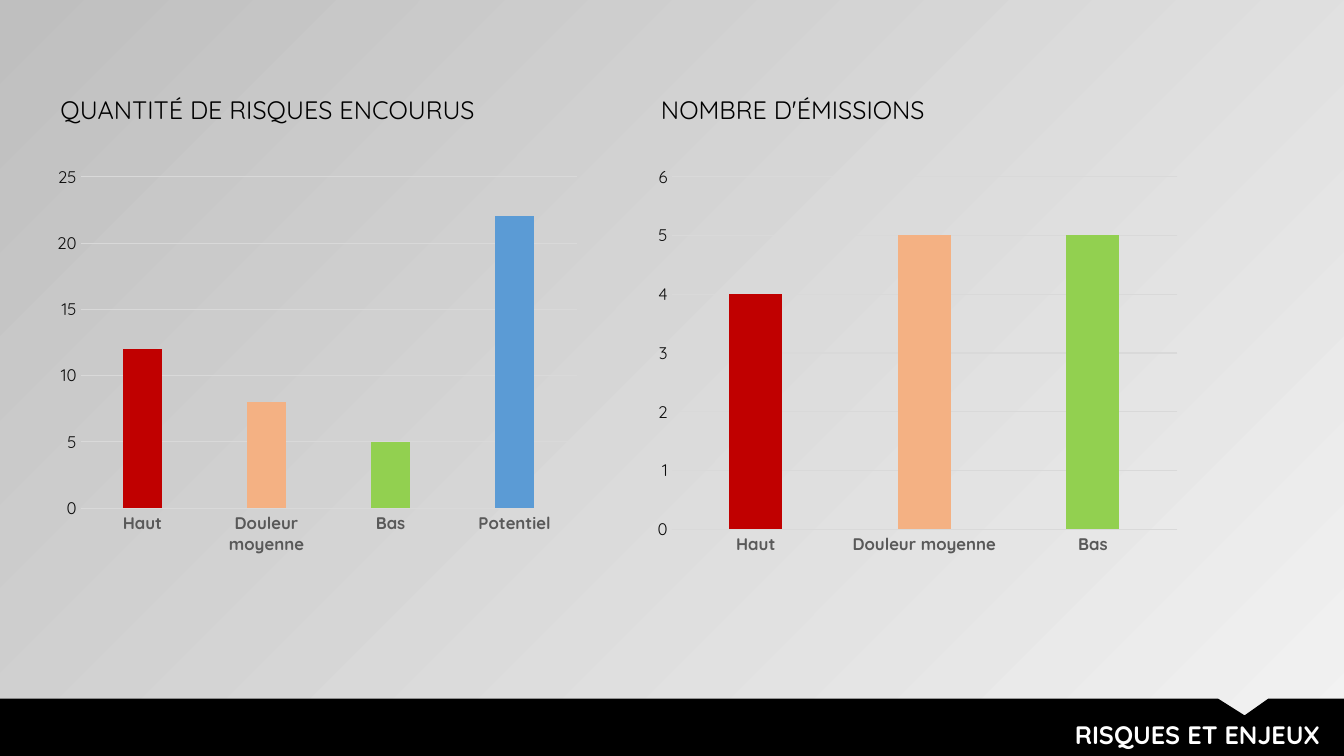
from dataclasses import dataclass

from pptx import Presentation
from pptx import util as u
from pptx.chart.data import CategoryChartData
from pptx.dml.color import RGBColor
from pptx.enum import chart as charts, text


@dataclass(frozen=True)
class Theme:
    font: str = "Quicksand"
    black: str = "000000"
    white: str = "FFFFFF"
    light: str = "F2F2F2"
    dark: str = "BFBFBF"
    grid: str = "D9D9D9"
    category: str = "595959"
    value: str = "0D0D0D"
    bars: tuple = ("C00000", "F4B183", "92D050", "5B9BD5")
    heading_size: int = 18
    axis_size: int = 12
    chart_size: int = 10


class SlideBuilder:
    def __init__(self, page, theme):
        self.page, self.theme = page, theme

    def style_font(self, font, size, color, bold=False):
        values = {"name": self.theme.font, "size": u.Pt(size), "bold": bold}
        for name, value in values.items():
            setattr(font, name, value)
        font.color.rgb = RGBColor.from_string(color)

    def style_line(self, line):
        line.width = u.Pt(0.75)
        line.color.rgb = RGBColor.from_string(self.theme.grid)

    def background(self):
        fill = self.page.background.fill
        fill.gradient()
        fill.gradient_angle = 135
        for stop, color in zip(fill.gradient_stops, (self.theme.light, self.theme.dark)):
            stop.color.rgb = RGBColor.from_string(color)

    def set_words(self, box, words, color, align, bold=False):
        frame = box.text_frame
        values = {
            "word_wrap": True,
            "auto_size": text.MSO_AUTO_SIZE.SHAPE_TO_FIT_TEXT,
            "vertical_anchor": text.MSO_ANCHOR.TOP,
            "margin_left": u.Pt(7.2), "margin_right": u.Pt(7.2),
            "margin_top": u.Pt(3.6), "margin_bottom": u.Pt(3.6),
        }
        for name, value in values.items():
            setattr(frame, name, value)
        para = frame.paragraphs[0]
        para.alignment = align
        para.line_spacing = 1.0
        para.space_before = u.Pt(0)
        span = para.add_run()
        span.text = words
        self.style_font(span.font, self.theme.heading_size, color, bold)

    def heading(self, words, left, top, width, height):
        box = self.page.shapes.add_textbox(*map(u.Pt, (left, top, width, height)))
        self.set_words(box, words, self.theme.black, text.PP_ALIGN.LEFT)

    def title(self, words, left, top, width, height):
        box = self.page.shapes.title
        places = {"left": left, "top": top, "width": width, "height": height}
        for name, value in places.items():
            setattr(box, name, u.Pt(value))
        self.set_words(box, words, self.theme.white, text.PP_ALIGN.RIGHT, bold=True)
        # Bring the title in front of the band
        self.page.shapes._spTree.append(box._element)

    def band(self, points):
        outline = self.page.shapes.build_freeform(*points[0], scale=u.Pt(1))
        outline.add_line_segments(points[1:], close=True)
        shape = outline.convert_to_shape()
        shape.shadow.inherit = False
        shape.fill.solid()
        shape.fill.fore_color.rgb = RGBColor.from_string(self.theme.black)
        shape.line.fill.background()

    def column_chart(self, bars, top_value, step, left, top, width, height):
        theme = self.theme
        data = CategoryChartData()
        data.categories = list(bars)
        data.add_series("Series 1", list(bars.values()))
        chart = self.page.shapes.add_chart(
            charts.XL_CHART_TYPE.COLUMN_CLUSTERED,
            *map(u.Pt, (left, top, width, height)), data).chart
        chart.has_legend = chart.has_title = False
        self.style_font(chart.font, theme.chart_size, theme.black)

        # Axes
        category, value = chart.category_axis, chart.value_axis
        scale = {"minimum_scale": 0, "maximum_scale": top_value, "major_unit": step,
                 "has_major_gridlines": True}
        for name, setting in scale.items():
            setattr(value, name, setting)
        for axis in (category, value):
            axis.major_tick_mark = axis.minor_tick_mark = charts.XL_TICK_MARK.NONE
        self.style_font(category.tick_labels.font, theme.axis_size, theme.category, True)
        self.style_font(value.tick_labels.font, theme.axis_size, theme.value)
        self.style_line(category.format.line)
        self.style_line(value.major_gridlines.format.line)
        value.format.line.fill.background()

        # Columns
        plot = chart.plots[0]
        for name, setting in {"gap_width": 219, "overlap": -5, "vary_by_categories": False}.items():
            setattr(plot, name, setting)
        for index, color in zip(range(len(bars)), theme.bars):
            fill = plot.series[0].points[index].format.fill
            fill.solid()
            fill.fore_color.rgb = RGBColor.from_string(color)


def main():
    deck = Presentation()
    deck.slide_width, deck.slide_height = u.Pt(960), u.Pt(540)
    title_only = deck.slide_layouts[5]
    slide = SlideBuilder(deck.slides.add_slide(title_only), Theme())
    slide.background()

    # Two charts side by side, each under its heading
    panels = [
        ("QUANTITÉ DE RISQUES ENCOURUS",
         {"Haut": 12, "Douleur moyenne": 8, "Bas": 5, "Potentiel": 22}, 25, 5),
        ("NOMBRE D'ÉMISSIONS", {"Haut": 4, "Douleur moyenne": 5, "Bas": 5}, 6, 1),
    ]
    for column, (heading, bars, top_value, step) in enumerate(panels):
        left = 33 + column * 429
        slide.column_chart(bars, top_value, step, left, 113, 386.6, 288.7)
        slide.heading(heading, left + 3, 64, 320, 29)

    # Notched band with the title
    slide.band([(0, 499), (870.5, 499), (889, 511), (906.5, 499),
                (960, 499), (960, 540), (0, 540)])
    slide.title("RISQUES ET ENJEUX", 298, 510, 652, 29)

    deck.save("out.pptx")


if __name__ == "__main__":
    main()
